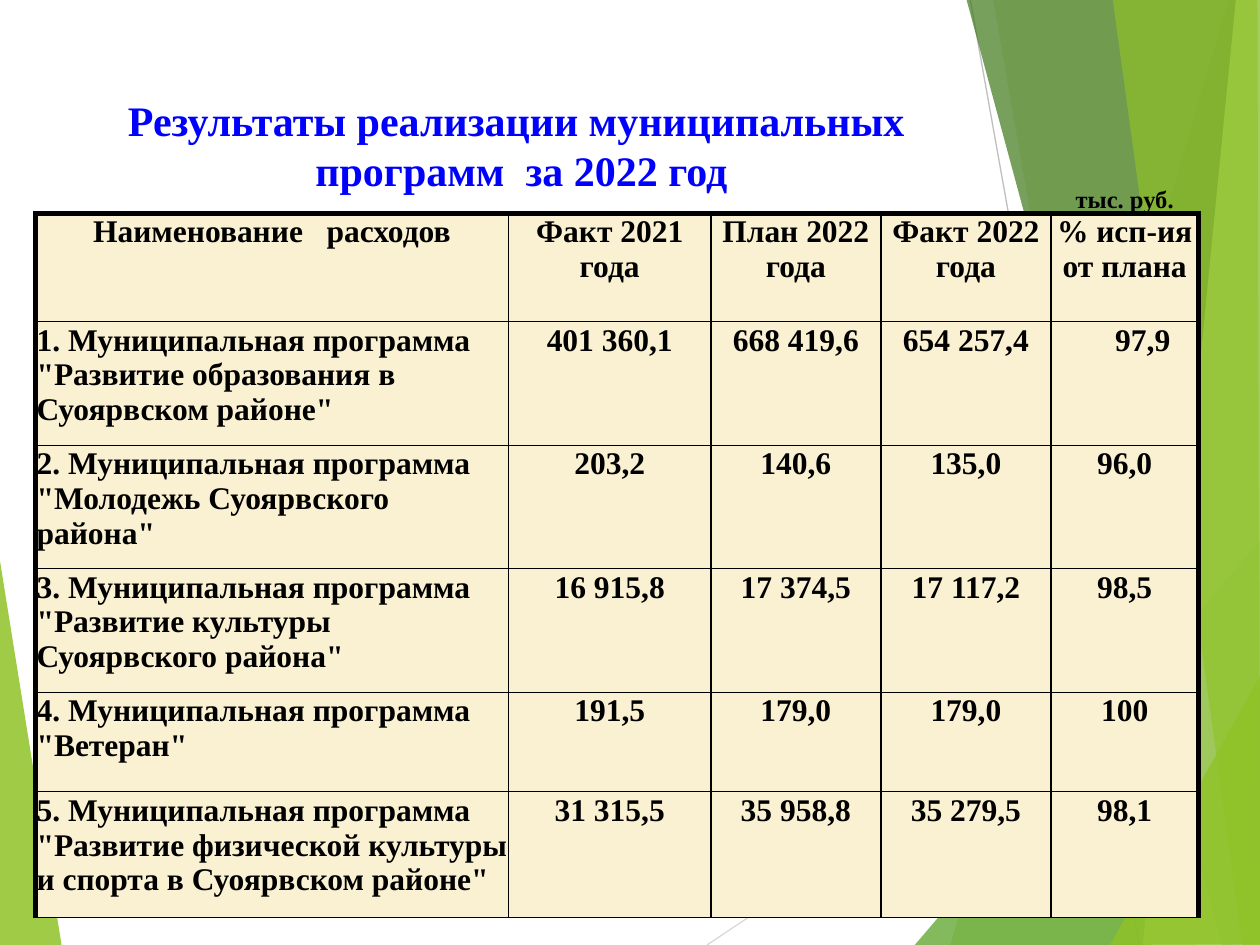
from lxml import etree
from pptx import Presentation
from pptx.dml.color import RGBColor
from pptx.enum import shapes, text
from pptx.oxml import ns
from pptx.util import Pt

COLORS = {
    "lime": "90C226", "pale": "C0E474", "green": "54A021", "dark": "3F7819",
    "gray": "BFBFBF", "light": "D9D9D9", "title": "0000FF",
    "black": "000000", "cream": "FAF1D2",
}
FONT = "Times New Roman"
CENTER = text.PP_ALIGN.CENTER


def write(frame, words, size=18, color="black", align=CENTER):
    paragraph = frame.paragraphs[0]
    paragraph.alignment = align
    paragraph.text = words
    for run in paragraph.runs:
        run.font.name = FONT
        run.font.size = Pt(size)
        run.font.bold = True
        run.font.color.rgb = RGBColor.from_string(COLORS[color])
    return paragraph


def set_borders(cell, **widths):
    """Draw the named sides (L, R, T, B) in black; a width of 0 hides the side."""
    properties = cell._tc.get_or_add_tcPr()
    for side in "LRTB":
        width = widths.get(side, 0)
        line = etree.SubElement(properties, ns.qn(f"a:ln{side}"), w=str(Pt(width)))
        if width:
            fill = etree.SubElement(line, ns.qn("a:solidFill"))
            etree.SubElement(fill, ns.qn("a:srgbClr"), val=COLORS["black"])
        else:
            etree.SubElement(line, ns.qn("a:noFill"))


presentation = Presentation()
presentation.slide_width, presentation.slide_height = Pt(720), Pt(540)
slide = presentation.slides.add_slide(presentation.slide_layouts[5])

# Background: two thin lines and translucent facets (colour, opacity %, corners)
for color, start, end in [
    ("light", (404, 540), (720, 329)),
    ("gray", (554.5, 0), (651, 540)),
]:
    line = slide.shapes.add_connector(
        shapes.MSO_CONNECTOR.STRAIGHT, *map(Pt, start + end))
    line.line.color.rgb = RGBColor.from_string(COLORS[color])
    line.line.width = Pt(0.75)
    etree.SubElement(line._element.spPr, ns.qn("a:effectLst"))

facets = [
    ("lime", 85, [(-0.7, 316), (35.3, 540.5), (-0.7, 540)]),
    ("lime", 30, [(702, 0), (543, 540), (721, 540.5), (720.7, 0.5)]),
    ("lime", 20, [(567.4, -0.7), (661.7, 540), (720.7, 540), (720.7, -0.7)]),
    ("green", 72, [(522.7, 540), (720, 309), (720.7, 540)]),
    ("dark", 70, [(552.2, -0.7), (698.4, 540), (720.7, 539.5), (720.7, -0.7)]),
    ("pale", 70, [(706.3, -0.7), (653, 540), (720.7, 540), (720, -0.7)]),
    ("lime", 65, [(635.8, -0.7), (710, 540), (720, 540), (718.6, -0.7)]),
    ("lime", 80, [(634.3, 540), (720.7, 385.2), (720.7, 539.5)]),
]
for color, opacity, corners in facets:
    points = [(Pt(x), Pt(y)) for x, y in corners]
    builder = slide.shapes.build_freeform(*points[0], scale=1.0)
    builder.add_line_segments(points[1:], close=True)
    facet = builder.convert_to_shape()
    facet.shadow.inherit = False
    facet.line.fill.background()
    facet.fill.solid()
    facet.fill.fore_color.rgb = RGBColor.from_string(COLORS[color])
    color_element = next(facet._element.spPr.iter(ns.qn("a:srgbClr")))
    etree.SubElement(color_element, ns.qn("a:alpha"), val=str(opacity * 1000))

# Title, brought in front of the background
title = slide.shapes.title
slide.shapes._spTree.append(title._element)
title.left, title.top, title.width, title.height = map(Pt, (48, 48, 500, 104))
title.text_frame.vertical_anchor = text.MSO_ANCHOR.TOP
title.text_frame.margin_top = Pt(6)
title.text_frame.word_wrap = True
write(title.text_frame, "Результаты реализации муниципальных \vпрограмм  за 2022 год",
      size=24, color="title")

# Table: a unit row, the header, then one row for each programme
rows = [
    ["", "", "", "", " тыс. руб. "],
    ["Наименование   расходов", "Факт 2021 года", "План 2022 года",
     "Факт 2022 года", "% исп-ия от плана"],
    ['1. Муниципальная программа "Развитие образования в Суоярвском районе"',
     "401 360,1", "668 419,6", "654 257,4", "97,9"],
    ['2. Муниципальная программа "Молодежь Суоярвского района"',
     "203,2", "140,6", "135,0", "96,0"],
    ['3. Муниципальная программа "Развитие культуры Суоярвского района"',
     "16 915,8", "17 374,5", "17 117,2", "98,5"],
    ['4. Муниципальная программа "Ветеран"',
     "191,5", "179,0", "179,0", "100"],
    ['5. Муниципальная программа "Развитие физической культуры и спорта в Суоярвском районе"',
     "31 315,5", "35 958,8", "35 279,5", "98,1"],
]
column_widths = [270.5, 115.5, 97.2, 97.2, 84.2]
row_heights = [11.5, 61.9, 70.6, 70.6, 70.6, 56.9, 72]
last = len(column_widths) - 1

frame = slide.shapes.add_table(len(rows), len(column_widths), Pt(20.2), Pt(105.8),
                               Pt(sum(column_widths)), Pt(sum(row_heights)))
table = frame.table
table.first_row = table.horz_banding = False
style = next(table._tbl.iter(ns.qn("a:tableStyleId")))
style.text = "{2D5ABB26-0587-4C30-8999-92F81FD0307C}"
for column, width in zip(table.columns, column_widths):
    column.width = Pt(width)
for row, height in zip(table.rows, row_heights):
    row.height = Pt(height)
table.cell(0, 1).merge(table.cell(0, 3))

for i, row in enumerate(rows):
    for j, words in enumerate(row):
        cell = table.cell(i, j)
        cell.margin_left = cell.margin_right = cell.margin_top = Pt(0.7)
        cell.margin_bottom = 0
        is_name = j == 0 and i > 1
        paragraph = write(cell.text_frame, words, size=18 if i else 14,
                          align=text.PP_ALIGN.LEFT if is_name else CENTER)
        if not words:
            paragraph._p.get_or_add_endParaRPr().set("sz", "800")
        if i == 0:
            cell.vertical_anchor = text.MSO_ANCHOR.BOTTOM
            set_borders(cell, B=3)
            cell.fill.background()
            continue
        set_borders(cell, L=1 if j else 3, R=3 if j == last else 1,
                    T=3 if i == 1 else 1 if i < 4 else 0.5,
                    B=1 if i < 3 else 0.5)
        cell.fill.solid()
        cell.fill.fore_color.rgb = RGBColor.from_string(COLORS["cream"])

# The first percentage is indented instead of centred
indented = table.cell(2, last).text_frame.paragraphs[0]
indented.alignment = text.PP_ALIGN.LEFT
indented.level = 1
indented._p.get_or_add_pPr().set("marL", str(Pt(36)))

presentation.save("out.pptx")
